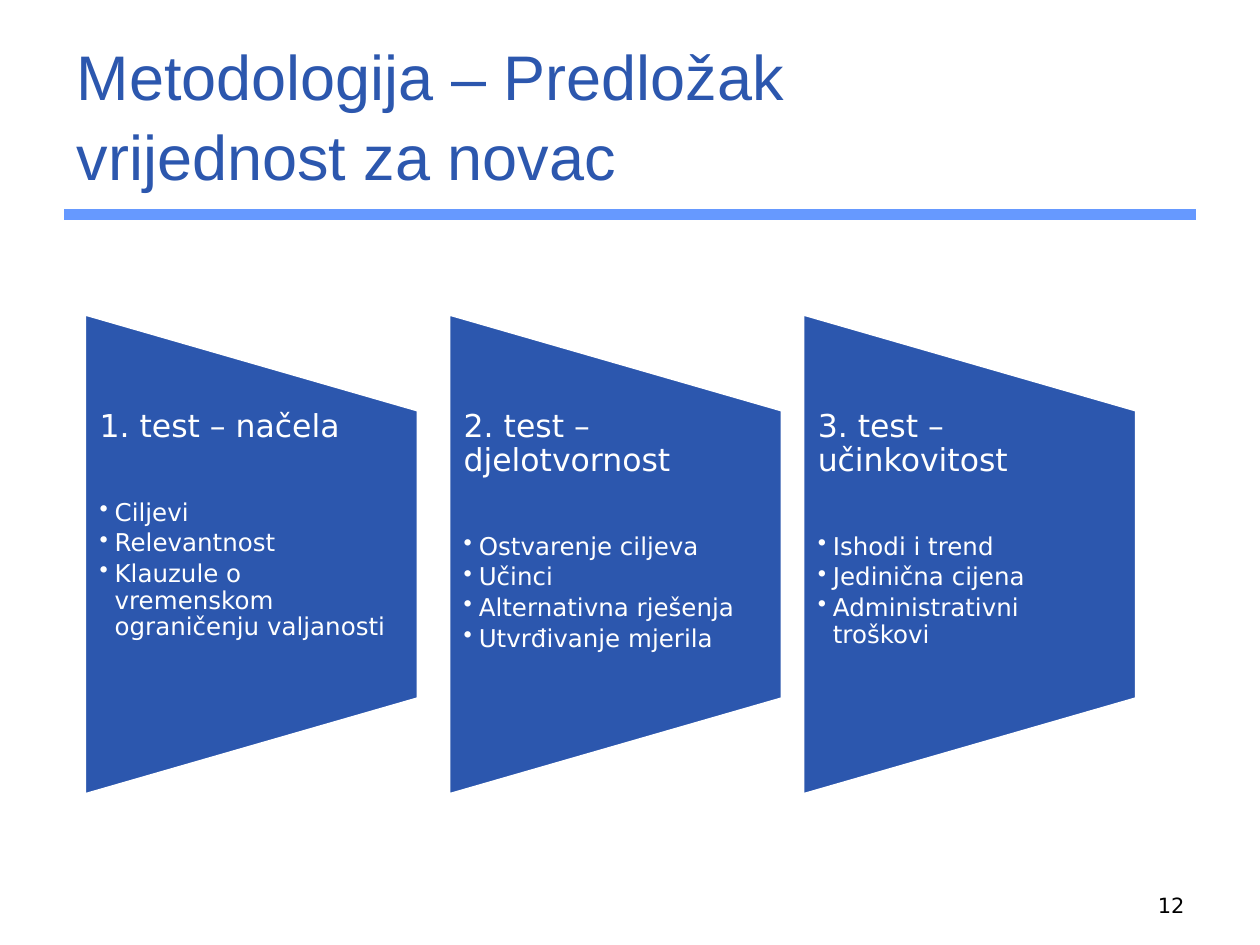
from lxml import etree
from pptx import Presentation, util as u
from pptx.dml.color import RGBColor
from pptx.enum import shapes, text
from pptx.oxml.ns import qn

NAVY, SKY, WHITE, BLACK = "2C57AE", "6699FF", "FFFFFF", "000000"
BODY_FONT, TITLE_FONT = "DejaVu Sans", "Arial"
MARGIN, CONTENT_WIDTH = 0.51, 8.98
PANEL_WIDTH, PANEL_HEIGHT, PANEL_MIDDLE = 2.65, 3.82, 4.4
TEXT_HEIGHT = PANEL_HEIGHT * 0.6
BULLET_INDENT = 0.12

TESTS = [
    (0.67, "1. test – načela",
     ["Ciljevi", "Relevantnost", "Klauzule o vremenskom ograničenju valjanosti"]),
    (3.56, "2. test – djelotvornost",
     ["Ostvarenje ciljeva", "Učinci", "Alternativna rješenja", "Utvrđivanje mjerila"]),
    (6.37, "3. test – učinkovitost",
     ["Ishodi i trend", "Jedinična cijena", "Administrativni troškovi"]),
]


def color(value):
    return RGBColor.from_string(value)


def inches(*lengths):
    return [u.Inches(length) for length in lengths]


def add_run(paragraph, words, size, fill, font=BODY_FONT):
    run = paragraph.add_run()
    run.text = words
    run.font.size = u.Pt(size)
    run.font.name = font
    run.font.color.rgb = color(fill)


def add_title(slide, lines):
    title = slide.shapes.title
    title.left, title.top, title.width, title.height = inches(
        MARGIN, 0.33, CONTENT_WIDTH, 1.25)
    frame = title.text_frame
    frame.word_wrap = True
    frame.auto_size = text.MSO_AUTO_SIZE.NONE
    frame.vertical_anchor = text.MSO_ANCHOR.BOTTOM
    heading = frame.paragraphs[0]
    heading.alignment = text.PP_ALIGN.LEFT
    heading.line_spacing = 1.05
    for index, line in enumerate(lines):
        if index:
            heading.add_line_break()
        add_run(heading, line, 36, NAVY, TITLE_FONT)


def add_rule(slide, top):
    rule = slide.shapes.add_connector(
        shapes.MSO_CONNECTOR.STRAIGHT,
        *inches(MARGIN, top, MARGIN + CONTENT_WIDTH, top))
    rule.line.color.rgb = color(SKY)
    rule.line.width = u.Pt(6.25)
    etree.SubElement(rule._element.spPr, qn("a:effectLst"))


def add_panel(slide, left):
    """Trapezoid tapering to the right: a manual-operation shape on its side."""
    center = left + PANEL_WIDTH / 2
    panel = slide.shapes.add_shape(
        shapes.MSO_SHAPE.FLOWCHART_MANUAL_OPERATION,
        *inches(center - PANEL_HEIGHT / 2, PANEL_MIDDLE - PANEL_WIDTH / 2,
                PANEL_HEIGHT, PANEL_WIDTH))
    panel.rotation = 270
    panel.shadow.inherit = False
    panel.fill.solid()
    panel.fill.fore_color.rgb = color(NAVY)
    panel.line.color.rgb = color(WHITE)
    panel.line.width = u.Pt(2)


def add_bullet(paragraph):
    properties = paragraph._p.get_or_add_pPr()
    indent = u.Inches(BULLET_INDENT)
    properties.set("marL", str(indent))
    properties.set("indent", str(-indent))
    etree.SubElement(properties, qn("a:buChar"), char="•")


def add_test_text(slide, left, heading, points):
    box = slide.shapes.add_textbox(
        *inches(left, PANEL_MIDDLE - TEXT_HEIGHT / 2, PANEL_WIDTH, TEXT_HEIGHT))
    frame = box.text_frame
    frame.word_wrap = True
    frame.margin_left, frame.margin_right = inches(0.12, 0.13)
    frame.margin_top = frame.margin_bottom = 0
    first = frame.paragraphs[0]
    first.line_spacing = 0.9
    first.space_after = u.Pt(32)
    add_run(first, heading, 18, WHITE)
    for point in points:
        item = frame.add_paragraph()
        add_bullet(item)
        item.level = 1
        item.line_spacing = 0.9
        item.space_after = u.Pt(2.4)
        add_run(item, point, 14, WHITE)


def add_page_number(slide, number):
    box = slide.shapes.add_textbox(*inches(7.17, 6.83, 2.33, 0.5))
    frame = box.text_frame
    frame.word_wrap = True
    frame.vertical_anchor = text.MSO_ANCHOR.BOTTOM
    frame.paragraphs[0].alignment = text.PP_ALIGN.RIGHT
    add_run(frame.paragraphs[0], number, 12, BLACK)


def main():
    deck = Presentation()
    deck.slide_width, deck.slide_height = inches(10, 7.5)
    slide = deck.slides.add_slide(deck.slide_layouts.get_by_name("Title Only"))
    add_rule(slide, 1.7)
    add_title(slide, ["Metodologija – Predložak", "vrijednost za novac"])
    add_page_number(slide, "12")
    for left, heading, points in TESTS:
        add_panel(slide, left)
        add_test_text(slide, left, heading, points)
    deck.save("out.pptx")


if __name__ == "__main__":
    main()
